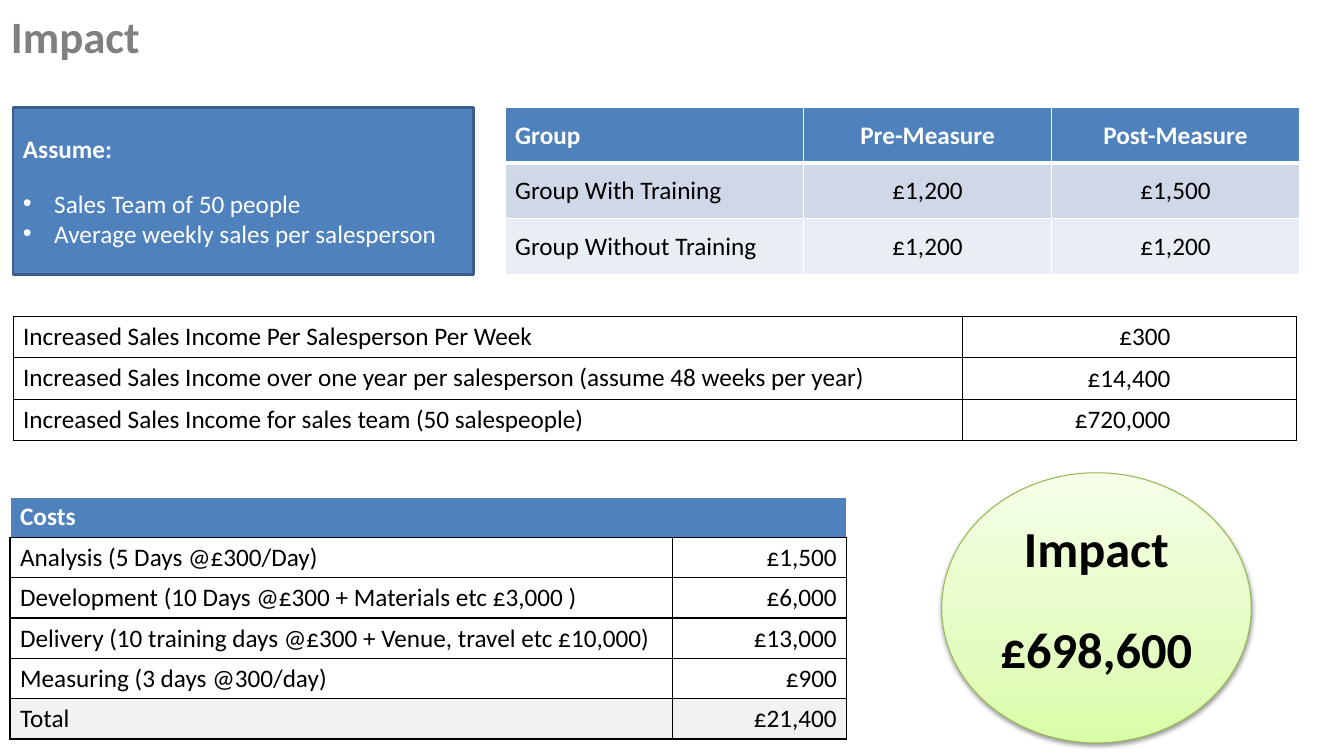
"""Build the training impact slide with its measures, costs and result."""
import copy
import dataclasses
import typing

import pptx
import pptx.dml.color
import pptx.enum.shapes
import pptx.enum.text
import pptx.oxml
import pptx.oxml.ns
import pptx.util

Inches = pptx.util.Inches
Pt = pptx.util.Pt
Align = pptx.enum.text.PP_ALIGN
Anchor = pptx.enum.text.MSO_ANCHOR
Shape = pptx.enum.shapes.MSO_SHAPE

COLOURS = {
    "blue": "4F81BD", "blue_edge": "3A5F8C", "band_dark": "D0D8E8", "band_light": "E9EDF4",
    "total": "F2F2F2", "white": "FFFFFF", "black": "000000", "title": "808080",
    "green_edge": "98B955", "green_low": "DAFDA7", "green_mid": "E4FCC2", "green_high": "F5FFE7",
}
NAMESPACE = pptx.oxml.ns.nsdecls("a")


@dataclasses.dataclass(frozen=True)
class Line:
    """One paragraph of text and its look."""
    text: str
    colour: str = "black"
    size: float = 18
    bold: bool = False
    align: Align = Align.LEFT
    before: float = 0
    bullet: bool = False


@dataclasses.dataclass(frozen=True)
class Grid:
    """A table with its place, rows and row styles."""
    left: float
    top: float
    row_height: float
    widths: tuple[float, ...]
    rows: tuple[tuple[str, ...], ...]
    fills: tuple[str | None, ...]
    value_align: Align = Align.RIGHT
    value_margin: float = 0.1
    header: bool = True
    border: str = "black"
    header_rule: float = 1
    first_anchor: Anchor = Anchor.TOP
    value_anchor: Anchor = Anchor.TOP


@dataclasses.dataclass(frozen=True)
class Panel:
    """A shape or text box holding lines of text."""
    left: float
    top: float
    width: float
    height: float
    lines: tuple[Line, ...]
    kind: Shape | None = None
    edge: str = "white"
    edge_width: float = 1
    anchor: Anchor = Anchor.TOP
    wrap: bool = True


TITLE = Panel(0.01, 0.04, 1.49, 0.64, (Line("Impact", "title", 32, True),), wrap=False)
ASSUMPTIONS = Panel(0.13, 1.07, 4.57, 1.65, (
    Line("Assume:", "white", bold=True),
    Line("Sales Team of 50 people", "white", before=17, bullet=True),
    Line("Average weekly sales per salesperson", "white", bullet=True),
), Shape.RECTANGLE, "blue_edge", 2, Anchor.MIDDLE)
RESULT = Panel(9.34, 4.69, 3.07, 2.68, (
    Line("Impact", size=36, bold=True, align=Align.CENTER),
    Line("£698,600", size=36, bold=True, align=Align.CENTER, before=29),
), Shape.OVAL, "green_edge", 0.75)

MEASURES = Grid(5.01, 1.07, 0.55, (2.96, 2.46, 2.46), (
    ("Group", "Pre-Measure", "Post-Measure"),
    ("Group With Training", "£1,200", "£1,500"),
    ("Group Without Training", "£1,200", "£1,200"),
), ("blue", "band_dark", "band_light"), Align.CENTER, border="white", header_rule=3,
    first_anchor=Anchor.MIDDLE, value_anchor=Anchor.MIDDLE)
INCOME = Grid(0.13, 3.14, 0.41, (9.42, 3.31), (
    ("Increased Sales Income Per Salesperson Per Week", "£300"),
    ("Increased Sales Income over one year per salesperson (assume 48 weeks per year)", "£14,400"),
    ("Increased Sales Income for sales team (50 salespeople)", "£720,000"),
), (None, None, None), value_margin=1.25, header=False, value_anchor=Anchor.MIDDLE)
COSTS = Grid(0.1, 4.93, 0.4, (6.57, 1.73), (
    ("Costs",),
    ("Analysis (5 Days @£300/Day)", "£1,500"),
    ("Development (10 Days @£300 + Materials etc £3,000 )", "£6,000"),
    ("Delivery (10 training days @£300 + Venue, travel etc £10,000)", "£13,000"),
    ("Measuring (3 days @300/day)", "£900"),
    ("Total", "£21,400"),
), ("blue", None, None, None, None, "total"))


def rgb(name: str) -> pptx.dml.color.RGBColor:
    """Look up a named colour."""
    return pptx.dml.color.RGBColor.from_string(COLOURS[name])


def set_format(target: typing.Any, values: dict[str, typing.Any]) -> None:
    """Set each named attribute on the target."""
    for name, value in values.items():
        setattr(target, name, value)


def write_lines(frame: typing.Any, lines: tuple[Line, ...]) -> None:
    """Write the lines as paragraphs of a text frame."""
    for index, line in enumerate(lines):
        para = frame.add_paragraph() if index else frame.paragraphs[0]
        set_format(para, {"alignment": line.align, "space_before": Pt(line.before)})
        if line.bullet:
            properties = para._p.get_or_add_pPr()
            properties.set("marL", str(Inches(0.31)))
            properties.set("indent", str(-Inches(0.31)))
            for markup in (f'<a:buFont {NAMESPACE} typeface="Arial"/>',
                           f'<a:buChar {NAMESPACE} char="•"/>'):
                properties.append(pptx.oxml.parse_xml(markup))
        span = para.add_run()
        span.text = line.text
        set_format(span.font, {"name": "Calibri", "size": Pt(line.size), "bold": line.bold})
        span.font.color.rgb = rgb(line.colour)


def draw_panel(page: typing.Any, panel: Panel) -> typing.Any:
    """Draw a text box or a filled shape with text."""
    place = [Inches(value) for value in (panel.left, panel.top, panel.width, panel.height)]
    if panel.kind is None:
        box = page.shapes.add_textbox(*place)
    else:
        box = page.shapes.add_shape(panel.kind, *place)
        box.shadow.inherit = False
        box.fill.solid()
        box.fill.fore_color.rgb = rgb("blue")
        box.line.color.rgb = rgb(panel.edge)
        box.line.width = Pt(panel.edge_width)
    set_format(box.text_frame, {"word_wrap": panel.wrap, "vertical_anchor": panel.anchor})
    write_lines(box.text_frame, panel.lines)
    return box


def shade_result(oval: typing.Any) -> None:
    """Give the result a rising green gradient and a soft shadow."""
    oval.fill.gradient()
    oval.fill.gradient_angle = 90
    first = oval.element.spPr.xpath(".//a:gs")[0]
    first.addnext(copy.deepcopy(first))
    looks = ((0, "green_low"), (0.35, "green_mid"), (1, "green_high"))
    for stop, (position, colour) in zip(oval.fill.gradient_stops, looks):
        stop.position = position
        stop.color.rgb = rgb(colour)
    oval.element.spPr.xpath("a:effectLst")[0].append(pptx.oxml.parse_xml(
        f'<a:outerShdw {NAMESPACE} blurRad="{Pt(3.1)}" dist="{Pt(1.6)}" dir="5400000" '
        'rotWithShape="0"><a:srgbClr val="000000"><a:alpha val="38000"/></a:srgbClr></a:outerShdw>'))


def draw_borders(cell: typing.Any, sides: dict[str, tuple[str, float]]) -> None:
    """Add the cell's side lines ahead of its fill."""
    properties = cell._tc.get_or_add_tcPr()
    for index, (side, (colour, width)) in enumerate(sides.items()):
        properties.insert(index, pptx.oxml.parse_xml(
            f'<a:ln{side} {NAMESPACE} w="{Pt(width)}"><a:solidFill>'
            f'<a:srgbClr val="{COLOURS[colour]}"/></a:solidFill></a:ln{side}>'))


def draw_grid(page: typing.Any, grid: Grid) -> None:
    """Draw a table from its description."""
    count = len(grid.rows)
    table = page.shapes.add_table(
        count, len(grid.widths), Inches(grid.left), Inches(grid.top),
        Inches(sum(grid.widths)), Inches(grid.row_height * count)).table
    set_format(table, {"first_row": grid.header, "horz_banding": False})
    for column, width in zip(table.columns, grid.widths):
        column.width = Inches(width)
    for row_index, (texts, fill) in enumerate(zip(grid.rows, grid.fills)):
        table.rows[row_index].height = Inches(grid.row_height)
        heading = grid.header and row_index == 0
        sides = dict.fromkeys("LRTB", (grid.border, 1))
        if heading:
            sides = dict.fromkeys("LRT", ("white", 1)) | {"B": (grid.border, grid.header_rule)}
        elif grid.header and row_index == 1:
            sides["T"] = (grid.border, grid.header_rule)
        for column_index, cell in enumerate(table.rows[row_index].cells):
            if fill:
                cell.fill.solid()
                cell.fill.fore_color.rgb = rgb(fill)
            else:
                cell.fill.background()
            draw_borders(cell, sides)
            cell.vertical_anchor = grid.value_anchor if column_index else grid.first_anchor
            if column_index:
                cell.margin_right = Inches(grid.value_margin)
            if column_index < len(texts):
                align = grid.value_align if column_index else Align.LEFT
                colour = "white" if heading else "black"
                write_lines(cell.text_frame, (
                    Line(texts[column_index], colour, bold=heading, align=align),))
        if len(texts) < len(grid.widths):
            table.cell(row_index, 0).merge(table.cell(row_index, len(grid.widths) - 1))


def main() -> None:
    """Build and save the deck."""
    deck = pptx.Presentation()
    set_format(deck, {"slide_width": Inches(13.33), "slide_height": Inches(7.5)})
    page = deck.slides.add_slide(deck.slide_layouts[6])
    for panel in (TITLE, ASSUMPTIONS):
        draw_panel(page, panel)
    for grid in (MEASURES, INCOME, COSTS):
        draw_grid(page, grid)
    shade_result(draw_panel(page, RESULT))
    deck.save("out.pptx")


if __name__ == "__main__":
    main()
